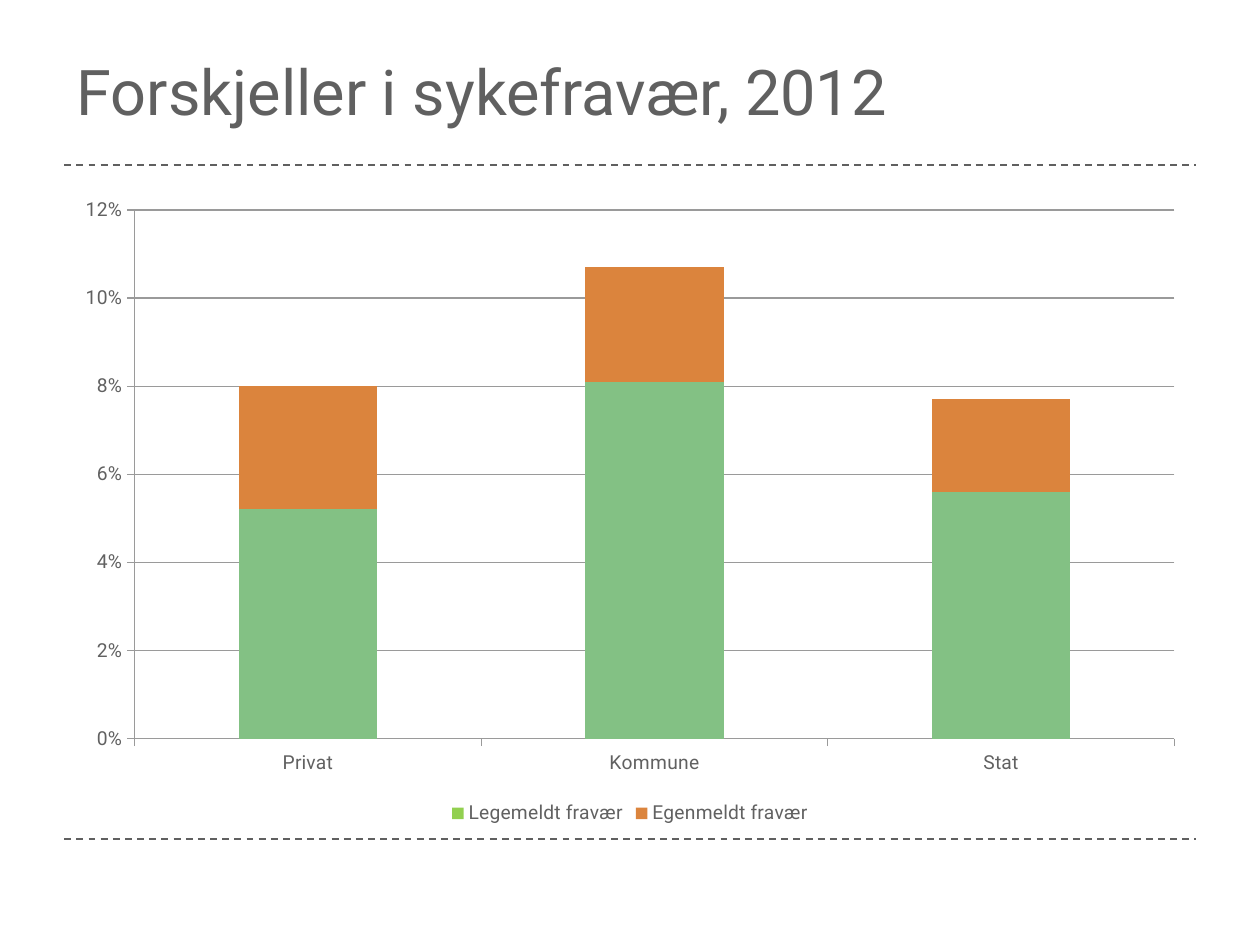
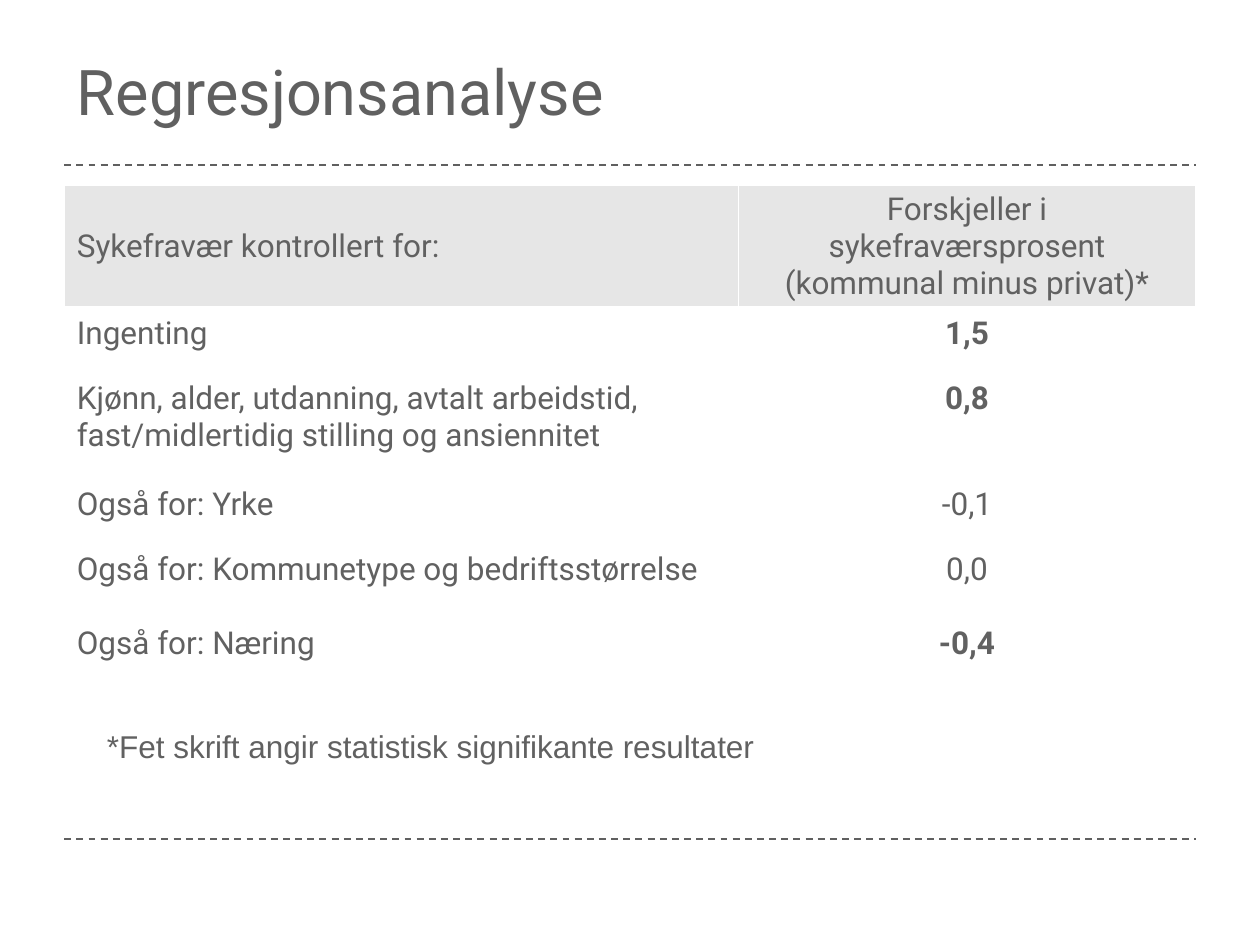
from lxml import etree
from pptx import Presentation
from pptx.chart.data import CategoryChartData
from pptx.dml.color import RGBColor
from pptx.enum.chart import XL_CHART_TYPE, XL_LEGEND_POSITION, XL_TICK_MARK
from pptx.enum.dml import MSO_LINE
from pptx.enum.shapes import MSO_CONNECTOR
from pptx.enum.text import MSO_ANCHOR, MSO_AUTO_SIZE, PP_ALIGN
from pptx.oxml.ns import qn
from pptx.util import Inches, Pt

STACKED = XL_CHART_TYPE.COLUMN_STACKED
LEGEND_BOTTOM = XL_LEGEND_POSITION.BOTTOM
TICK_OUTSIDE = XL_TICK_MARK.OUTSIDE
TICK_NONE = XL_TICK_MARK.NONE
DASH = MSO_LINE.DASH
STRAIGHT = MSO_CONNECTOR.STRAIGHT
TOP, MIDDLE = MSO_ANCHOR.TOP, MSO_ANCHOR.MIDDLE
NO_FIT, GROW = MSO_AUTO_SIZE.NONE, MSO_AUTO_SIZE.SHAPE_TO_FIT_TEXT
LEFT, CENTER = PP_ALIGN.LEFT, PP_ALIGN.CENTER

FONT, NOTE_FONT = "Roboto", "Arial"
TITLE_COLOR, TEXT_COLOR = "606060", "616161"
GRID_COLOR, HEADER_FILL, WHITE = "9A9A9A", "E6E6E6", "FFFFFF"
RULE_LEFT, RULE_RIGHT = 0.51, 9.49
RULE_HEIGHTS = (1.31, 6.66)
CONTENT_TOP = 1.47


def color(value):
    """Turn a hex string into a colour."""
    return RGBColor.from_string(value)


def paint(fill, value):
    """Fill with one solid colour."""
    fill.solid()
    fill.fore_color.rgb = color(value)


def style_font(font, size, value=TEXT_COLOR, name=FONT, bold=False):
    """Set the face, size, colour and weight of a font."""
    font.name, font.size, font.bold = name, Pt(size), bold
    font.color.rgb = color(value)


def write(frame, text, align=LEFT, anchor=TOP, **font_format):
    """Write one formatted paragraph into a text frame."""
    frame.vertical_anchor = anchor
    paragraph = frame.paragraphs[0]
    paragraph.alignment = align
    run = paragraph.add_run()
    run.text = text
    style_font(run.font, **font_format)


def set_borders(cell, value, bottom_width):
    """Give a cell solid borders, with its own width at the bottom."""
    properties = cell._tc.get_or_add_tcPr()
    for side, width in (("L", 1), ("R", 1), ("T", 1), ("B", bottom_width)):
        line = etree.SubElement(properties, qn(f"a:ln{side}"), w=str(Pt(width)))
        fill = etree.SubElement(line, qn("a:solidFill"))
        etree.SubElement(fill, qn("a:srgbClr"), val=value)


class Deck:
    """Holds the presentation, its style and the current slide."""

    def __init__(self):
        """Start an empty presentation."""
        self.presentation = Presentation()
        self.presentation.slide_width = Inches(10)
        self.presentation.slide_height = Inches(7.5)
        self.slide = None

    def add_slide(self, title):
        """Add a slide with the shared rules and title."""
        layout = self.presentation.slide_layouts.get_by_name("Title Only")
        self.slide = self.presentation.slides.add_slide(layout)
        for height in RULE_HEIGHTS:
            self.add_rule(height)
        shape = self.slide.shapes.title
        shape.left, shape.top = Inches(RULE_LEFT), Inches(0.21)
        shape.width, shape.height = Inches(9), Inches(1.01)
        shape.text_frame.auto_size = NO_FIT
        write(shape.text_frame, title, anchor=MIDDLE, size=36, value=TITLE_COLOR)

    def add_rule(self, height):
        """Draw a dashed line across the slide."""
        rule = self.slide.shapes.add_connector(
            STRAIGHT, Inches(RULE_LEFT), Inches(height), Inches(RULE_RIGHT), Inches(height))
        rule.line.color.rgb = color(TITLE_COLOR)
        rule.line.width = Pt(1)
        rule.line.dash_style = DASH
        etree.SubElement(rule._element.spPr, qn("a:effectLst"))

    def add_stacked_chart(self, categories, series):
        """Add a stacked column chart of (name, values, colour, column colour)."""
        data = CategoryChartData(number_format="0%")
        data.categories = categories
        for name, values, *_ in series:
            data.add_series(name, values)
        chart = self.slide.shapes.add_chart(
            STACKED, Inches(0.5), Inches(CONTENT_TOP), Inches(9), Inches(5.12), data).chart
        chart.has_title = False
        style_font(chart.font, 11)
        chart.has_legend = True
        chart.legend.position = LEGEND_BOTTOM
        chart.legend.include_in_layout = False
        style_font(chart.legend.font, 11)
        plot = chart.plots[0]
        plot.gap_width, plot.overlap, plot.vary_by_categories = 150, 100, False
        for drawn, (_, values, key_color, column_color) in zip(plot.series, series):
            drawn.invert_if_negative = False
            paint(drawn.format.fill, key_color)
            if column_color != key_color:
                for index in range(len(values)):
                    paint(drawn.points[index].format.fill, column_color)
        self.style_axes(chart)

    def style_axes(self, chart):
        """Format both axes and the gridlines."""
        value_axis = chart.value_axis
        value_axis.minimum_scale, value_axis.maximum_scale = 0, 0.12
        value_axis.major_unit = 0.02
        value_axis.has_major_gridlines = True
        value_axis.tick_labels.number_format = "0%"
        value_axis.tick_labels.number_format_is_linked = False
        lines = [value_axis.major_gridlines.format.line]
        for axis in (chart.category_axis, value_axis):
            axis.major_tick_mark, axis.minor_tick_mark = TICK_OUTSIDE, TICK_NONE
            style_font(axis.tick_labels.font, 11)
            lines.append(axis.format.line)
        for line in lines:
            line.color.rgb = color(GRID_COLOR)
            line.width = Pt(0.75)

    def add_table(self, header, rows, widths, heights):
        """Add a table whose rows are (label, result, significant)."""
        table = self.slide.shapes.add_table(
            len(heights), len(widths), Inches(RULE_LEFT), Inches(CONTENT_TOP),
            Inches(sum(widths)), Inches(sum(heights))).table
        table.horz_banding = False
        for column, width in zip(table.columns, widths):
            column.width = Inches(width)
        for row, height in zip(table.rows, heights):
            row.height = Inches(height)
        for row_index, (label, result, significant) in enumerate([(*header, False), *rows]):
            is_header = row_index == 0
            for column_index, text in enumerate((label, result)):
                cell = table.cell(row_index, column_index)
                set_borders(cell, WHITE, 3 if is_header else 1)
                if is_header:
                    paint(cell.fill, HEADER_FILL)
                else:
                    cell.fill.background()
                cell.vertical_anchor = MIDDLE if is_header else TOP
                is_result = column_index == 1
                write(cell.text_frame, text, align=CENTER if is_result else LEFT,
                      anchor=None, size=18, bold=significant and is_result)

    def add_note(self, text, left, top, width, height):
        """Add a one-line note."""
        box = self.slide.shapes.add_textbox(
            Inches(left), Inches(top), Inches(width), Inches(height))
        box.text_frame.word_wrap = False
        box.text_frame.auto_size = GROW
        write(box.text_frame, text, size=18, name=NOTE_FONT)


def main():
    """Build and save the slides."""
    deck = Deck()

    deck.add_slide("Forskjeller i sykefravær, 2012")
    deck.add_stacked_chart(
        ("Privat", "Kommune", "Stat"),
        [("Legemeldt fravær", (0.052, 0.081, 0.056), "92D050", "83C184"),
         ("Egenmeldt fravær", (0.028, 0.026, 0.021), "DB843D", "DB843D")])

    deck.add_slide("Regresjonsanalyse")
    deck.add_table(
        ("Sykefravær kontrollert for:",
         "Forskjeller i sykefraværsprosent (kommunal minus privat)*"),
        [("Ingenting", "1,5", True),
         ("Kjønn, alder, utdanning, avtalt arbeidstid, "
          "fast/midlertidig stilling og ansiennitet", "0,8", True),
         ("Også for: Yrke", "-0,1", False),
         ("Også for: Kommunetype og bedriftsstørrelse", "0,0", False),
         ("Også for: Næring", "-0,4", True)],
        widths=(5.35, 3.63), heights=(0.9, 0.52, 0.84, 0.52, 0.58, 0.52))
    deck.add_note("*Fet skrift angir statistisk signifikante resultater", 0.75, 5.72, 5.36, 0.4)

    deck.presentation.save("out.pptx")


if __name__ == "__main__":
    main()
